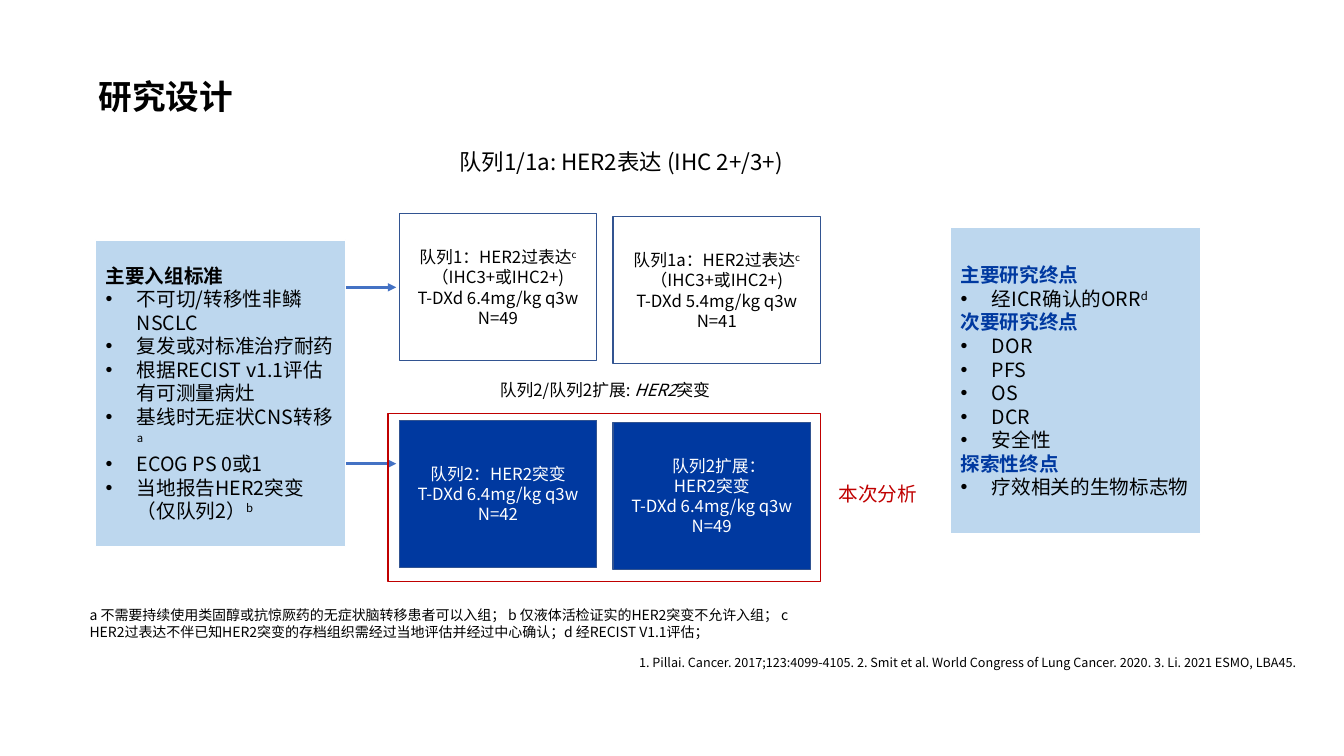
from lxml.etree import SubElement
from pptx import Presentation
from pptx.dml.color import RGBColor
from pptx.enum.shapes import MSO_CONNECTOR, MSO_SHAPE
from pptx.enum.text import MSO_ANCHOR, PP_ALIGN
from pptx.oxml.ns import qn
from pptx.util import Pt

PX = 9144
FONT = "Noto Sans CJK SC"
BLACK = RGBColor(0x00, 0x00, 0x00)
WHITE = RGBColor(0xFF, 0xFF, 0xFF)
NAVY = RGBColor(0x00, 0x39, 0xA0)
PALE_BLUE = RGBColor(0xBD, 0xD7, 0xEE)
BORDER_BLUE = RGBColor(0x32, 0x54, 0x91)
ARROW_BLUE = RGBColor(0x44, 0x72, 0xC4)
RED = RGBColor(0xC0, 0x00, 0x00)
INDENT = 31

CRITERIA = [
    [("不可切/转移性非鳞NSCLC", "")],
    [("复发或对标准治疗耐药", "")],
    [("根据RECIST v1.1评估有可测量病灶", "")],
    [("基线时无症状CNS转移", ""), ("a", "super")],
    [("ECOG PS 0或1", "")],
    [("当地报告HER2突变（仅队列2）", ""), ("b", "super")],
]
ENDPOINTS = [
    ("主要研究终点", [[("经ICR确认的ORR", ""), ("d", "super")]]),
    ("次要研究终点", [[(name, "")] for name in ("DOR", "PFS", "OS", "DCR", "安全性")]),
    ("探索性终点", [[("疗效相关的生物标志物", "")]]),
]


def px(*lengths):
    """Turn px lengths into EMU."""
    return [length * PX for length in lengths]


def write(paragraph, runs, size, color=BLACK, bold=False, align=PP_ALIGN.LEFT, margin=0, bullet=False):
    """Fill one paragraph with (text, style) runs in a shared font."""
    properties = paragraph._p.get_or_add_pPr()
    if margin:
        properties.set("marL", str(margin * PX))
    if bullet:
        properties.set("indent", str(-margin * PX))
        SubElement(properties, qn("a:buFont"), typeface="Arial")
        SubElement(properties, qn("a:buChar"), char="•")
    paragraph.alignment = align
    font = paragraph.font
    font.size, font.bold, font.name = Pt(size), bold, FONT
    font.color.rgb = color
    SubElement(properties.find(qn("a:defRPr")), qn("a:ea"), typeface=FONT)
    for text, style in runs:
        run = paragraph.add_run()
        run.text = text
        if style == "super":
            run._r.get_or_add_rPr().set("baseline", "30000")
        elif style == "italic":
            run.font.italic = True


def next_paragraph(frame):
    """Return the empty first paragraph, or a new one after the written ones."""
    first = frame.paragraphs[0]
    return frame.add_paragraph() if first.runs else first


def label(slide, box, runs, size, anchor=MSO_ANCHOR.TOP, wrap=True, **style):
    """Place a one-paragraph text box and return its paragraph."""
    frame = slide.shapes.add_textbox(*px(*box)).text_frame
    frame.word_wrap, frame.vertical_anchor = wrap, anchor
    write(frame.paragraphs[0], runs, size, **style)
    return frame.paragraphs[0]


def panel(slide, box, fill, border):
    """Draw a bordered rectangle and return its text frame."""
    rectangle = slide.shapes.add_shape(MSO_SHAPE.RECTANGLE, *px(*box))
    rectangle.shadow.inherit = False
    if fill is None:
        rectangle.fill.background()
    else:
        rectangle.fill.solid()
        rectangle.fill.fore_color.rgb = fill
    rectangle.line.color.rgb, rectangle.line.width = border, Pt(1)
    frame = rectangle.text_frame
    frame.word_wrap, frame.vertical_anchor = True, MSO_ANCHOR.MIDDLE
    return frame


def list_panel(slide, box, sections, heading_color):
    """Draw a pale panel of bold headings, each with its bullets."""
    frame = panel(slide, box, PALE_BLUE, WHITE)
    for heading, items in sections:
        write(next_paragraph(frame), [(heading, "")], 14, heading_color, bold=True)
        for runs in items:
            write(next_paragraph(frame), runs, 14, margin=INDENT, bullet=True)


def cohort(slide, box, lines, fill, color, first_margin=0):
    """Draw one cohort box with centred lines."""
    frame = panel(slide, box, fill, BORDER_BLUE)
    for index, runs in enumerate(lines):
        write(next_paragraph(frame), runs, 12, color, align=PP_ALIGN.CENTER,
              margin=0 if index else first_margin)


def arrow(slide, left, y, width):
    """Draw a horizontal arrow pointing right."""
    connector = slide.shapes.add_connector(MSO_CONNECTOR.STRAIGHT, *px(left, y, left + width, y))
    connector.line.color.rgb, connector.line.width = ARROW_BLUE, Pt(2)
    SubElement(connector.line._get_or_add_ln(), qn("a:tailEnd"), type="triangle")
    SubElement(connector._element.spPr, qn("a:effectLst"))


def expression_cohorts(slide, box):
    """Place the heading and the two overexpression cohorts."""
    left, top, width, _ = box
    label(slide, (left, top, width, 37), [("队列1/1a: HER2表达 (IHC 2+/3+)", "")], 16,
          MSO_ANCHOR.MIDDLE, align=PP_ALIGN.CENTER)
    for name, dose, count, x, y, w in (("1", "6.4", 49, 12, 70, 196), ("1a", "5.4", 41, 224, 73, 206)):
        title = [(f"队列{name}：HER2过表达", ""), ("c", "super"), ("（IHC3+或IHC2+)", "")]
        lines = [title, [(f"T-DXd {dose}mg/kg q3w", "")], [(f"N={count}", "")]]
        cohort(slide, (left + x, top + y, w, 146), lines, None, BLACK)


def mutation_cohorts(slide, box):
    """Place the heading, the two mutation cohorts and the analysis frame."""
    left, top, width, height = box
    label(slide, (left - 17, top, 464, 30),
          [("队列2/队列2扩展: ", ""), ("HER2", "italic"), ("突变", "")], 12,
          MSO_ANCHOR.MIDDLE, align=PP_ALIGN.CENTER)
    dose = [("T-DXd 6.4mg/kg q3w", "")]
    cohort(slide, (left + 11, top + 45, 196, 146),
           [[("队列2：HER2突变", "")], dose, [("N=42", "")]], NAVY, WHITE)
    cohort(slide, (left + 223, top + 47, 196, 146),
           [[("队列2扩展：", "")], [("HER2突变", "")], dose, [("N=49", "")]], NAVY, WHITE, first_margin=14)
    panel(slide, (left, top + 38, width, height - 38), None, RED)
    label(slide, (left + width + 8, top + 101, 103, 34), [("本次分析", "")], 14, color=RED)


def footer(slide, box):
    """Place the footnotes and the references."""
    left, top, width, _ = box
    notes = ("a 不需要持续使用类固醇或抗惊厥药的无症状脑转移患者可以入组； b 仅液体活检证实的HER2突变不允许入组； "
             "c HER2过表达不伴已知HER2突变的存档组织需经过当地评估并经过中心确认；d 经RECIST V1.1评估；")
    references = ("1. Pillai. Cancer. 2017;123:4099-4105. 2. Smit et al. World Congress of Lung Cancer. 2020. "
                  "3. Li. 2021 ESMO, LBA45.")
    label(slide, (left, top, 715, 44), [(notes, "")], 10)
    label(slide, (left + width - 705, top + 48, 705, 25), [(references, "")], 9, wrap=False)


def study_design(slide):
    """Lay out the study design slide."""
    title = label(slide, (88, 75, 289, 55), [("研究设计", "")], 24, bold=True)
    title.line_spacing = 0.9
    list_panel(slide, (95, 238, 248, 304), [("主要入组标准", CRITERIA)], BLACK)
    for y in (285, 460):
        arrow(slide, 343, y, 50)
    expression_cohorts(slide, (384, 142, 464, 219))
    mutation_cohorts(slide, (385, 372, 429, 205))
    list_panel(slide, (943, 226, 248, 304), ENDPOINTS, NAVY)
    footer(slide, (79, 597, 1250, 73))


def main():
    """Build and save the presentation."""
    presentation = Presentation()
    presentation.slide_width, presentation.slide_height = px(1333, 750)
    study_design(presentation.slides.add_slide(presentation.slide_layouts[6]))
    presentation.save("out.pptx")


if __name__ == "__main__":
    main()
